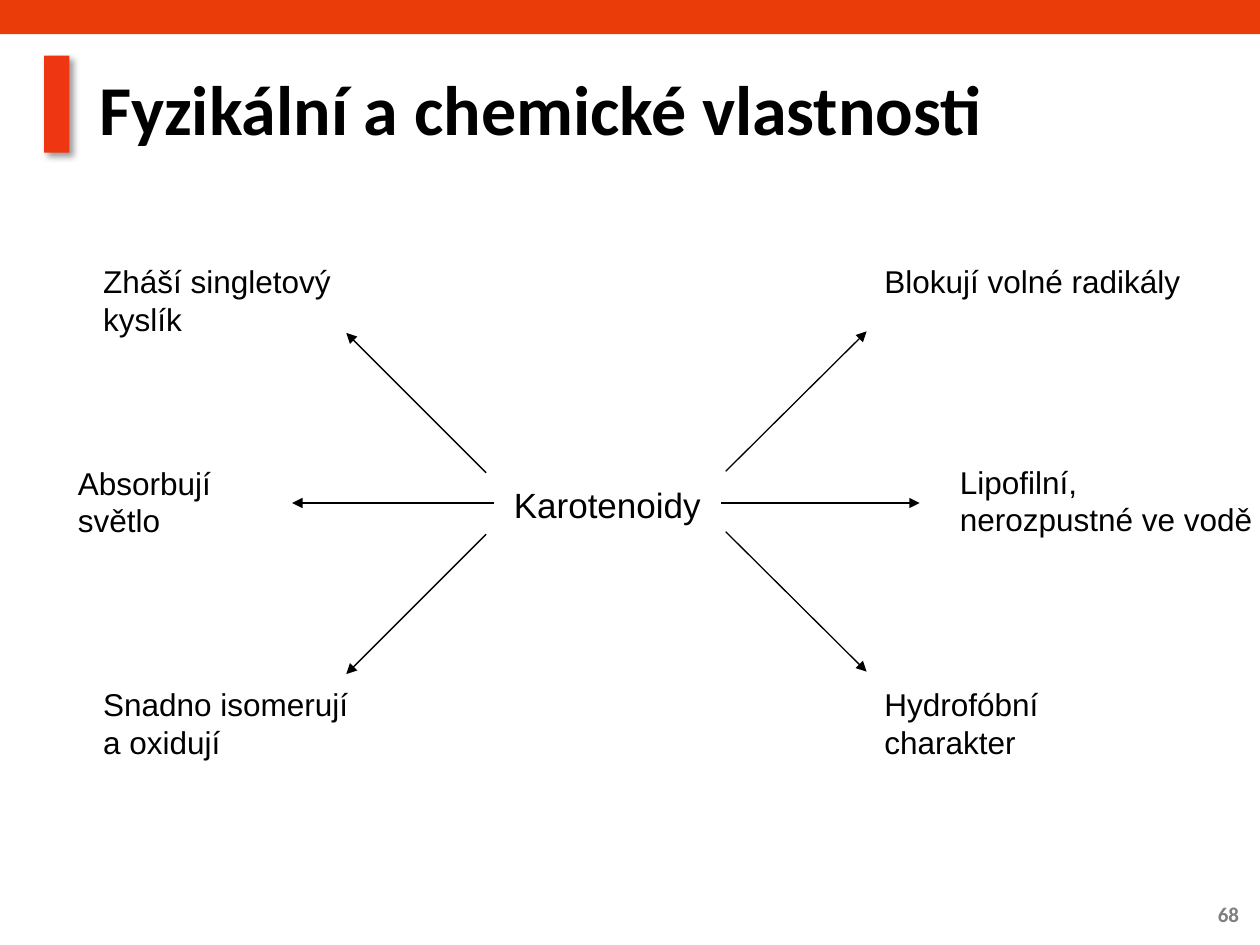
from lxml import etree
from pptx import Presentation
from pptx.dml.color import RGBColor
from pptx.enum.shapes import MSO_CONNECTOR, MSO_SHAPE
from pptx.enum.text import MSO_ANCHOR, MSO_AUTO_SIZE, PP_ALIGN
from pptx.oxml import parse_xml
from pptx.oxml.ns import qn
from pptx.util import Cm, Pt

RECT = MSO_SHAPE.RECTANGLE
LINE = MSO_CONNECTOR.STRAIGHT
TOP, MID = MSO_ANCHOR.TOP, MSO_ANCHOR.MIDDLE
LEFT, MIDST, RIGHT = PP_ALIGN.LEFT, PP_ALIGN.CENTER, PP_ALIGN.RIGHT
FIXED = MSO_AUTO_SIZE.NONE
BLACK, WHITE, GREY = "000000", "FFFFFF", "808080"
TITLE = {"name": "Calibri", "size": Pt(40), "bold": True}
NUMBER = {"name": "Calibri", "size": Pt(12), "bold": True}
CORE = {"name": "Arial", "size": Pt(20), "bold": False}
LABEL = {"name": "Arial", "size": Pt(18), "bold": False}
SHADOW = (
    '<a:effectLst xmlns:a="http://schemas.openxmlformats.org/drawingml/2006/main">'
    '<a:outerShdw blurRad="50800" dist="38100" dir="2700000" algn="tl" rotWithShape="0">'
    '<a:srgbClr val="000000"><a:alpha val="40000"/></a:srgbClr>'
    '</a:outerShdw></a:effectLst>'
)


def color(code):
    return RGBColor.from_string(code)


def span(box):
    return [Cm(value) for value in box]


def write(shape, text, style, ink=BLACK, align=LEFT, anchor=TOP):
    frame = shape.text_frame
    frame.text = text
    for key, value in {"word_wrap": True, "auto_size": FIXED,
                       "vertical_anchor": anchor}.items():
        setattr(frame, key, value)
    for para in frame.paragraphs:
        para.alignment = align
        for key, value in style.items():
            setattr(para.font, key, value)
        para.font.color.rgb = color(ink)


def block(slide, box, fill):
    shape = slide.shapes.add_shape(RECT, *span(box))
    shape.shadow.inherit = False
    shape.fill.solid()
    shape.fill.fore_color.rgb = color(fill)
    shape.line.fill.background()
    return shape


def arrow(slide, start, end):
    link = slide.shapes.add_connector(LINE, *span(start + end))
    link.line.width = Pt(0.75)
    link.line.color.rgb = color(BLACK)
    etree.SubElement(link.line._get_or_add_ln(), qn("a:tailEnd"), type="triangle")
    etree.SubElement(link._element.spPr, qn("a:effectLst"))


def header(slide, box):
    x, y, w, h = box
    block(slide, (x, y, w, 0.69), "E93C09")
    mark = block(slide, (x + 0.89, y + 1.12, 0.51, 1.96), "EE3712")
    props = mark._element.spPr
    props.replace(props.find(qn("a:effectLst")), parse_xml(SHADOW))
    title = slide.shapes.title
    spot = span((x + 1.75, y + 1.02, w - 2.41, h - 1.02))
    for key, value in zip(("left", "top", "width", "height"), spot):
        setattr(title, key, value)
    write(title, "Fyzikální a chemické vlastnosti", TITLE, anchor=MID)
    para = title.text_frame.paragraphs[0]
    para.line_spacing = 0.9
    props = para._p.get_or_add_pPr()
    props.set("marL", str(Cm(2.34)))
    props.set("indent", str(Cm(-2.34)))


def footer(slide, box):
    shape = slide.shapes.add_textbox(*span(box))
    write(shape, "68", NUMBER, GREY, RIGHT, MID)


def diagram(slide, box):
    x, y, w, h = box
    row = 2.03
    base = h - row
    level = y + 4.98
    for start, end in ((13.21, 17.22), (9.14, 4.57)):
        arrow(slide, (x + start, level), (x + end, level))

    core = block(slide, (x + 8.64, y + 4.47, 4.57, 1.52), WHITE)
    write(core, "Karotenoidy", CORE, align=MIDST)
    labels = (
        ("Blokují volné radikály", 16.26, 0, 7.62),
        ("Lipofilní,\nnerozpustné ve vodě", 17.78, 4.04, w - 17.78),
        ("Hydrofóbní charakter", 16.26, base, 6.1),
        ("Snadno isomerují a oxidují", 0.51, base, 5.59),
        ("Absorbují světlo", 0, 4.06, 3.56),
        ("Zháší singletový kyslík", 0.51, 0, 6.1),
    )
    for text, left, top, wide in labels:
        shape = block(slide, (x + left, y + top, wide, row), WHITE)
        write(shape, text, LABEL)

    for start, end, rise, high, drop, low in (
        (13.31, 16.15, 4.34, 1.52, 5.56, 8.38),
        (8.48, 5.66, 4.37, 1.55, 5.61, 8.43),
    ):
        arrow(slide, (x + start, y + rise), (x + end, y + high))
        arrow(slide, (x + start, y + drop), (x + end, y + low))


def main():
    deck = Presentation()
    deck.slide_width, deck.slide_height = Cm(25.4), Cm(19.05)
    slide = deck.slides.add_slide(deck.slide_layouts[5])
    header(slide, (0, 0, 25.4, 3.51))
    footer(slide, (23.5, 17.91, 1.73, 1.02))
    diagram(slide, (1.32, 5.16, 24.38, 10.56))
    deck.save("out.pptx")


if __name__ == "__main__":
    main()
